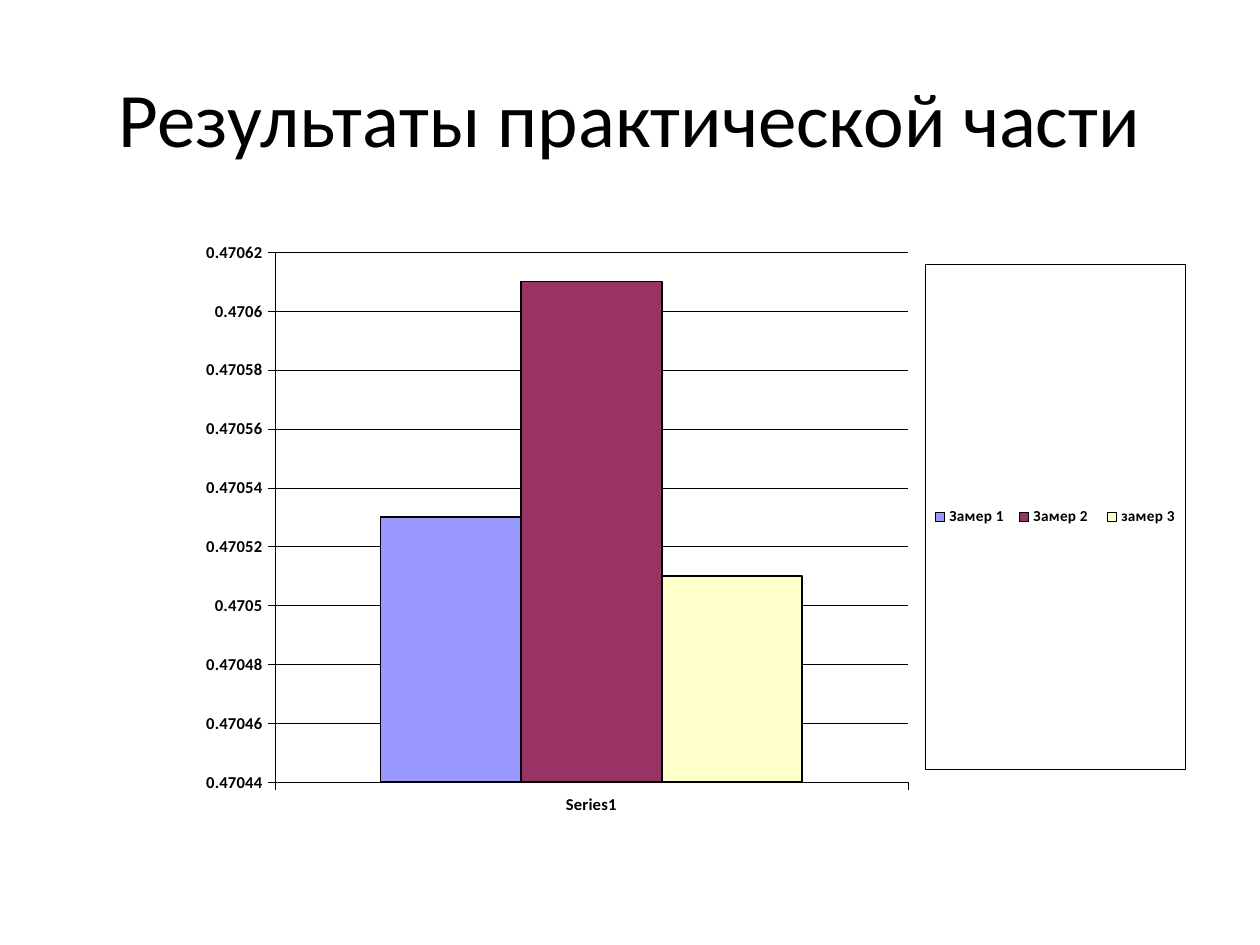
from lxml import etree
from pptx import Presentation
from pptx.chart.data import CategoryChartData
from pptx.dml.color import RGBColor
from pptx.enum.chart import XL_CHART_TYPE as ChartType, XL_LEGEND_POSITION as LegendPos
from pptx.enum.chart import XL_TICK_LABEL_POSITION as LabelPos, XL_TICK_MARK as Tick
from pptx.enum.text import MSO_ANCHOR, PP_ALIGN
from pptx.oxml.ns import qn
from pptx.util import Inches, Pt

BLACK = RGBColor(0x00, 0x00, 0x00)
WHITE = RGBColor(0xFF, 0xFF, 0xFF)
BLUE = RGBColor(0x99, 0x99, 0xFF)
PLUM = RGBColor(0x99, 0x33, 0x66)
CREAM = RGBColor(0xFF, 0xFF, 0xCC)

MEASUREMENTS = [
    ("Замер 1", 0.47053, BLUE),
    ("Замер 2 ", 0.47061, PLUM),
    ("замер 3", 0.47051, CREAM),
]
VALUE_SCALE = {"minimum_scale": 0.47044, "maximum_scale": 0.47062, "major_unit": 0.00002}
PLOT_BOX = {"x": 0.187, "y": 0.051, "w": 0.558, "h": 0.85}
LEGEND_BOX = {"x": 0.76, "y": 0.07, "w": 0.23, "h": 0.81}


def apply(target, values):
    for name, value in values.items():
        setattr(target, name, value)


def style_line(line, width):
    line.color.rgb = BLACK
    line.width = Pt(width)


def place(element, box, before, inner=False):
    """Give a chart part a fixed box, in shares of the chart's size."""
    for old in element.findall(qn("c:layout")):
        element.remove(old)
    layout = etree.Element(qn("c:layout"))
    manual = etree.SubElement(layout, qn("c:manualLayout"))
    settings = {"layoutTarget": "inner"} if inner else {}
    settings.update(xMode="edge", yMode="edge", **box)
    for tag, value in settings.items():
        etree.SubElement(manual, qn(f"c:{tag}")).set("val", str(value))
    element.find(qn(before)).addprevious(layout)


class SlideBuilder:
    font = "Calibri"

    def __init__(self, prs):
        self.prs = prs
        self.s = prs.slides.add_slide(prs.slide_layouts[5])

    def box(self, x, y, w, h):
        """Turn shares of the slide's size into lengths."""
        width, height = self.prs.slide_width, self.prs.slide_height
        return [round(v) for v in (x * width, y * height, w * width, h * height)]

    def style_font(self, font, size, bold):
        apply(font, {"name": self.font, "size": Pt(size), "bold": bold})
        font.color.rgb = BLACK

    def title(self, text, *shares):
        sp = self.s.shapes.title
        apply(sp, dict(zip(("left", "top", "width", "height"), self.box(*shares))))
        tf = sp.text_frame
        tf.vertical_anchor = MSO_ANCHOR.MIDDLE
        p = tf.paragraphs[0]
        p.alignment = PP_ALIGN.CENTER
        r = p.add_run()
        r.text = text
        self.style_font(r.font, 44, False)

    def axis(self, axis, **values):
        apply(axis, {"major_tick_mark": Tick.OUTSIDE, "minor_tick_mark": Tick.NONE, **values})
        self.style_font(axis.tick_labels.font, 9.5, True)
        style_line(axis.format.line, 0.25)

    def legend(self, chart):
        chart.has_legend = True
        legend = chart.legend
        apply(legend, {"position": LegendPos.RIGHT, "include_in_layout": False})
        self.style_font(legend.font, 8.7, True)
        element = legend._element
        place(element, LEGEND_BOX, "c:overlay")
        sp_pr = etree.Element(qn("c:spPr"))
        fill = etree.SubElement(sp_pr, qn("a:solidFill"))
        etree.SubElement(fill, qn("a:srgbClr")).set("val", str(WHITE))
        line = etree.SubElement(sp_pr, qn("a:ln"), w=str(Pt(0.25)))
        fill = etree.SubElement(line, qn("a:solidFill"))
        etree.SubElement(fill, qn("a:srgbClr")).set("val", str(BLACK))
        element.find(qn("c:txPr")).addprevious(sp_pr)

    def column_chart(self, category, rows, *shares):
        data = CategoryChartData(number_format="General")
        data.categories = [category]
        for name, value, _ in rows:
            data.add_series(name, [value])
        chart = self.s.shapes.add_chart(
            ChartType.COLUMN_CLUSTERED, *self.box(*shares), data).chart
        chart.has_title = False
        self.style_font(chart.font, 9.5, True)
        plot = chart.plots[0]
        apply(plot, {"gap_width": 150, "overlap": 0, "vary_by_categories": False})
        for series, (_, _, color) in zip(plot.series, rows):
            series.format.fill.solid()
            series.format.fill.fore_color.rgb = color
            style_line(series.format.line, 1)
        self.axis(chart.category_axis, tick_label_position=LabelPos.LOW)
        self.axis(chart.value_axis, has_major_gridlines=True, **VALUE_SCALE)
        style_line(chart.value_axis.major_gridlines.format.line, 0.25)
        self.legend(chart)
        plot_area = chart._chartSpace.find(f".//{qn('c:plotArea')}")
        place(plot_area, PLOT_BOX, "c:barChart", inner=True)


def main():
    prs = Presentation()
    apply(prs, {"slide_width": Inches(10), "slide_height": Inches(7.5)})
    slide = SlideBuilder(prs)
    slide.title("Результаты практической части", 0.05, 0.04, 0.9, 1 / 6)
    slide.column_chart("Series1", MEASUREMENTS, 0.05, 0.2333, 0.9, 0.66)
    prs.save("out.pptx")


if __name__ == "__main__":
    main()
